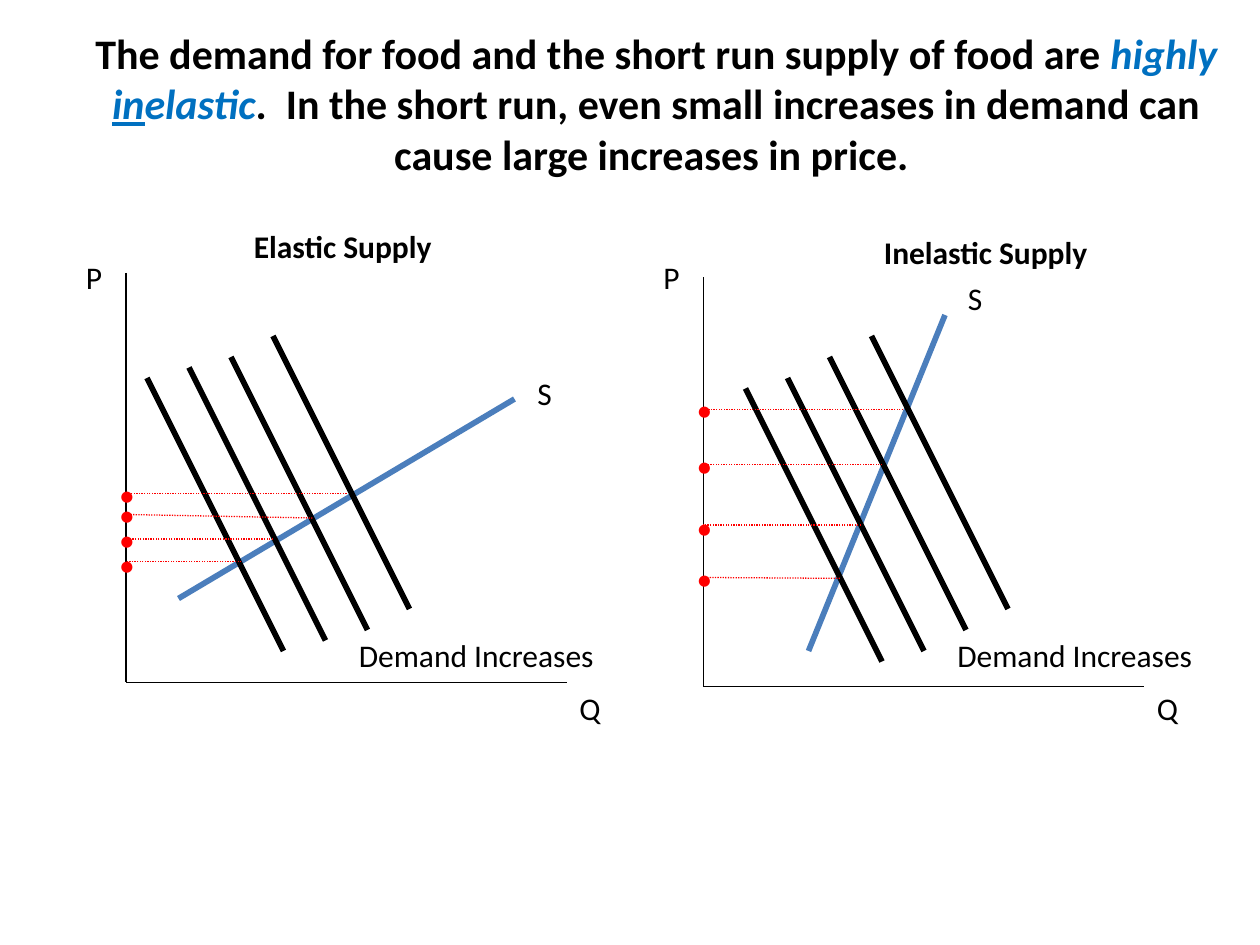
from dataclasses import dataclass

from lxml import etree
from pptx import Presentation
from pptx import util as u
from pptx.dml.color import RGBColor
from pptx.enum import dml, shapes, text
from pptx.oxml import ns

Point = tuple[float, float]


@dataclass(frozen=True)
class Theme:
    font: str = "Calibri"
    ink: RGBColor = RGBColor(0, 0, 0)
    accent: RGBColor = RGBColor(0x00, 0x70, 0xC0)
    supply: RGBColor = RGBColor(0x4B, 0x7E, 0xBC)
    price: RGBColor = RGBColor(0xFF, 0, 0)
    title_size: float = 24
    label_size: float = 18
    thin: float = 0.75
    thick: float = 3.25


@dataclass(frozen=True)
class Price:
    """A dotted guide from the supply curve to the axis, and its bullet."""
    crossing: Point
    axis_y: float
    bullet_top: float


@dataclass(frozen=True)
class Market:
    heading: str
    heading_at: Point
    heading_width: float
    axis_top: Point
    quantity_at: Point
    supply: tuple[Point, Point]
    supply_label_at: Point
    demand_tops: list[Point]
    demand_label_at: Point
    prices: list[Price]


THEME = Theme()
AXIS_HEIGHT, AXIS_WIDTH = 234, 252
DEMAND_RUN, DEMAND_DROP = 78, 156
LABEL_WIDTH, LABEL_HEIGHT = 30, 29
BULLET_WIDTH = 18
PRICE_LABEL_TOP = 144

MARKETS = [
    Market("Elastic Supply", (138, 126), 120, (72, 156), (324, 390),
           ((102, 342), (294, 228)), (300, 210),
           [(84, 216), (108, 210), (132, 204), (156, 192)], (198, 360),
           [Price((138, 321), 321, 308), Price((156, 308), 308, 293.5),
            Price((178.5, 296), 294, 279.5), Price((198, 282), 282, 268)]),
    Market("Inelastic Supply", (498, 129.5), 162, (402, 158.5), (654, 390),
           ((462, 372), (540, 180)), (546, 156),
           [(426, 222), (450, 216), (474, 204), (498, 192)], (540, 360),
           [Price((480, 330.5), 330, 316), Price((492, 300), 300, 286.5),
            Price((504, 265.5), 265.5, 251.5), Price((516, 234), 234, 219.5)]),
]


def add_line(page, start: Point, end: Point, color: RGBColor, width: float,
             dotted: bool = False) -> None:
    line = page.shapes.add_connector(
        shapes.MSO_CONNECTOR.STRAIGHT, *(u.Pt(value) for value in start + end))
    line.line.color.rgb = color
    line.line.width = u.Pt(width)
    if dotted:
        line.line.dash_style = dml.MSO_LINE.ROUND_DOT
    etree.SubElement(line._element.spPr, ns.qn("a:effectLst"))


def add_label(page, words: str, at: Point, width: float = LABEL_WIDTH,
              color: RGBColor = THEME.ink, bold: bool = False) -> None:
    box = page.shapes.add_textbox(
        *(u.Pt(value) for value in (*at, width, LABEL_HEIGHT)))
    frame = box.text_frame
    frame.word_wrap = True
    frame.auto_size = text.MSO_AUTO_SIZE.SHAPE_TO_FIT_TEXT
    para = frame.paragraphs[0]
    para.text = words
    para.font.name = THEME.font
    para.font.size = u.Pt(THEME.label_size)
    para.font.color.rgb = color
    para.font.bold = bold


def add_title(page) -> None:
    title = page.shapes.title
    title.left, title.top = u.Pt(42), u.Pt(12)
    title.width, title.height = u.Pt(666), u.Pt(94)
    frame = title.text_frame
    frame.word_wrap = True
    frame.auto_size = text.MSO_AUTO_SIZE.NONE
    frame.vertical_anchor = text.MSO_ANCHOR.TOP
    para = frame.paragraphs[0]
    para.alignment = text.PP_ALIGN.CENTER
    para.font.name = THEME.font
    para.font.size = u.Pt(THEME.title_size)
    para.font.bold = True
    for words, emphasis, underline in [
        ("The demand for food and the short run supply of food are ", False, False),
        ("highly ", True, False),
        ("in", True, True),
        ("elastic", True, False),
        (".  In the short run, even small increases in demand can cause "
         "large increases in price. ", False, False),
    ]:
        span = para.add_run()
        span.text = words
        span.font.italic = emphasis
        span.font.underline = underline
        span.font.color.rgb = THEME.accent if emphasis else THEME.ink


def add_market(page, market: Market) -> None:
    axis_x, top = market.axis_top
    origin = (axis_x, top + AXIS_HEIGHT)
    add_line(page, market.axis_top, origin, THEME.ink, THEME.thin)
    add_line(page, origin, (axis_x + AXIS_WIDTH, origin[1]), THEME.ink, THEME.thin)
    add_label(page, "P", (axis_x - LABEL_WIDTH, PRICE_LABEL_TOP))
    add_label(page, "Q", market.quantity_at)

    add_line(page, *market.supply, THEME.supply, THEME.thick)
    add_label(page, "S", market.supply_label_at)
    for x, y in market.demand_tops:
        add_line(page, (x, y), (x + DEMAND_RUN, y + DEMAND_DROP),
                 THEME.ink, THEME.thick)
    add_label(page, "Demand Increases", market.demand_label_at, 150)

    for price in market.prices:
        add_line(page, price.crossing, (axis_x, price.axis_y),
                 THEME.price, THEME.thin, dotted=True)
        add_label(page, "•", (axis_x - 11, price.bullet_top),
                  BULLET_WIDTH, THEME.price)
    add_label(page, market.heading, market.heading_at, market.heading_width,
              bold=True)


def main() -> None:
    deck = Presentation()
    deck.slide_width, deck.slide_height = u.Pt(720), u.Pt(540)
    page = deck.slides.add_slide(deck.slide_layouts.get_by_name("Title Only"))
    add_title(page)
    for market in MARKETS:
        add_market(page, market)
    deck.save("out.pptx")


if __name__ == "__main__":
    main()
